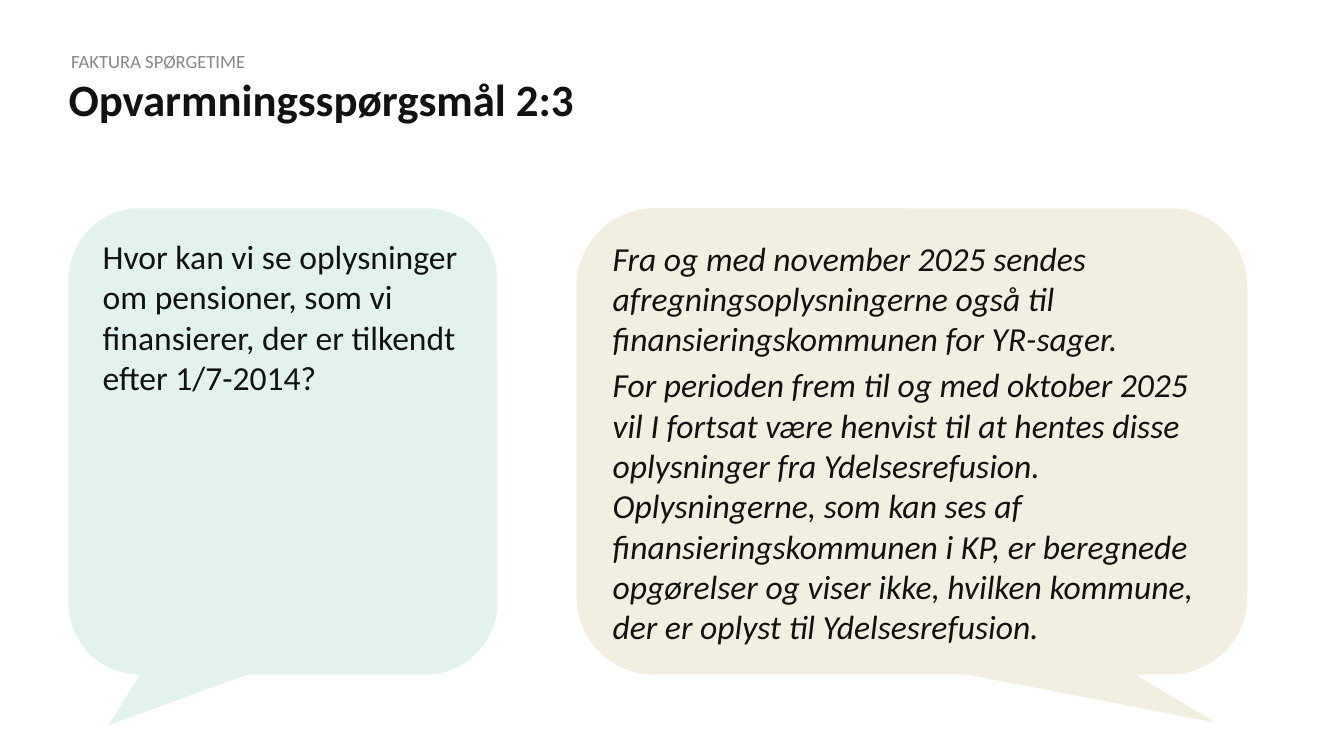
"""Build a question slide with two speech bubbles."""
import pptx
import pptx.dml.color
import pptx.enum.shapes
import pptx.enum.text
import pptx.util
from dataclasses import dataclass

Inches = pptx.util.Inches
Pt = pptx.util.Pt


@dataclass(frozen=True)
class Theme:
    face: str = "Calibri"
    ink: str = "111111"
    gray: str = "878787"
    mint: str = "E2F2EC"
    sand: str = "F3EFE0"
    head: int = 24
    body: int = 18
    small: int = 10


theme = Theme()


def color(code):
    return pptx.dml.color.RGBColor.from_string(code)


def write(frame, lines, size, ink, bold=False, italic=False, after=0):
    frame.word_wrap = True
    frame.auto_size = pptx.enum.text.MSO_AUTO_SIZE.NONE
    frame.vertical_anchor = pptx.enum.text.MSO_ANCHOR.TOP
    for i, line in enumerate(lines):
        para = frame.paragraphs[0] if i == 0 else frame.add_paragraph()
        para.text = line
        para.alignment = pptx.enum.text.PP_ALIGN.LEFT
        para.space_after = Pt(after)
        font = para.font
        font.name, font.size = theme.face, Pt(size)
        font.bold, font.italic = bold, italic
        font.color.rgb = color(ink)


deck = pptx.Presentation()
deck.slide_width = Inches(10)
deck.slide_height = Inches(10) * 9 // 16
slide = deck.slides.add_slide(deck.slide_layouts[5])
left = Inches(0.51)

title = slide.shapes.title
title.left, title.top = left, Inches(0.61)
title.width, title.height = Inches(4.33), Inches(0.71)
write(title.text_frame, ["Opvarmningsspørgsmål 2:3"], theme.head, theme.ink, bold=True)
title.text_frame.paragraphs[0].line_spacing = 0.8

label = slide.shapes.add_textbox(left, Inches(0.37), Inches(4.49), Inches(0.16))
write(label.text_frame, ["FAKTURA SPØRGETIME"], theme.small, theme.gray, after=6)

for box, inset in ((title, 0), (label, 0.02)):
    frame = box.text_frame
    frame.margin_left = Inches(inset)
    frame.margin_top = frame.margin_right = frame.margin_bottom = 0

answer = [
    "Fra og med november 2025 sendes afregningsoplysningerne også til "
    "finansieringskommunen for YR-sager.",
    "For perioden frem til og med oktober 2025 vil I fortsat være henvist til at "
    "hentes disse oplysninger fra Ydelsesrefusion. Oplysningerne, som kan ses af "
    "finansieringskommunen i KP, er beregnede opgørelser og viser ikke, hvilken "
    "kommune, der er oplyst til Ydelsesrefusion.",
]
query = [
    "Hvor kan vi se oplysninger om pensioner, som vi finansierer, der er tilkendt "
    "efter 1/7-2014?"
]
bubbles = [
    (Inches(4.29), Inches(4.99), (0.453, 0.603), theme.sand, answer, True, 3),
    (left, Inches(3.19), (-0.406, 0.608), theme.mint, query, False, 0),
]
for x, width, tip, fill, lines, italic, after in bubbles:
    bubble = slide.shapes.add_shape(
        pptx.enum.shapes.MSO_SHAPE.ROUNDED_RECTANGULAR_CALLOUT,
        x, Inches(1.55), width, Inches(3.47),
    )
    for i, value in enumerate((*tip, 0.167)):
        bubble.adjustments[i] = value
    bubble.shadow.inherit = False
    bubble.fill.solid()
    bubble.fill.fore_color.rgb = color(fill)
    bubble.line.fill.background()
    write(bubble.text_frame, lines, theme.body, theme.ink, italic=italic, after=after)

deck.save("out.pptx")
